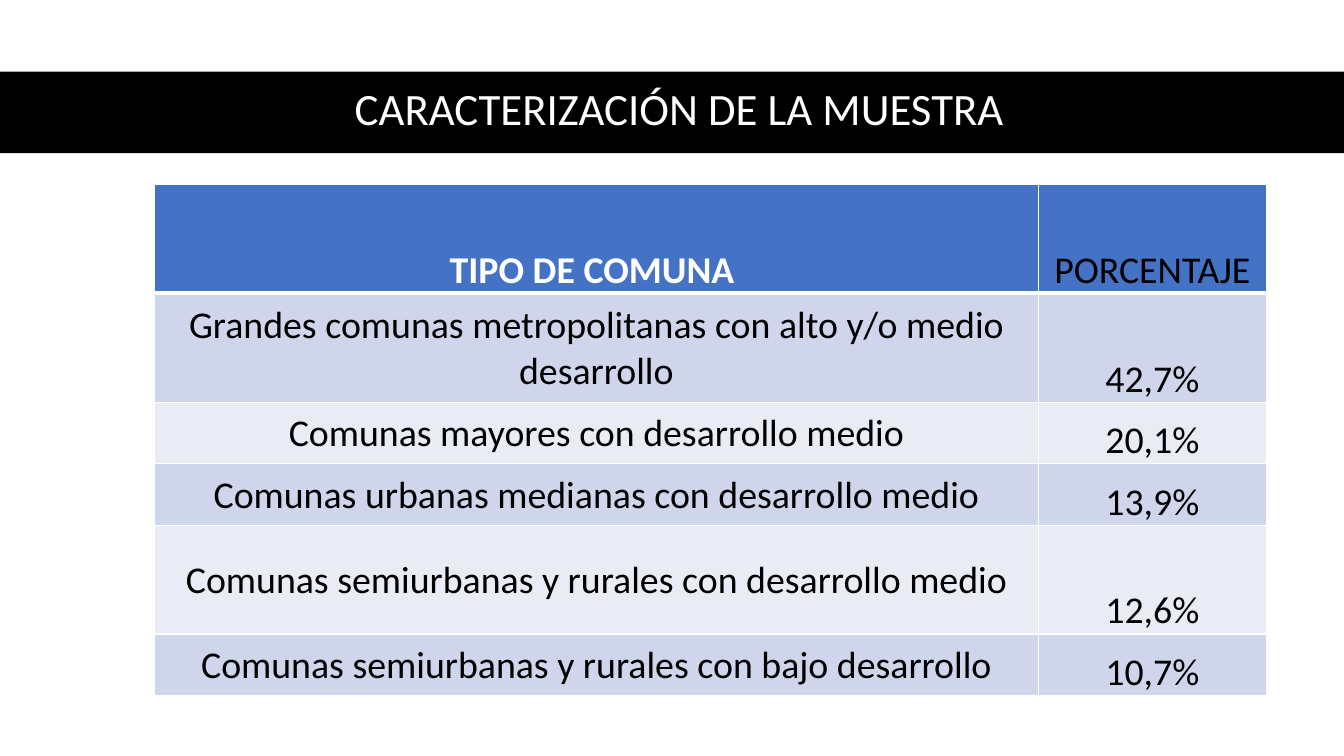
from pptx import Presentation
from pptx.dml.color import RGBColor
from pptx.enum.shapes import MSO_SHAPE as SHAPE
from pptx.enum.text import MSO_ANCHOR as ANCHOR, PP_ALIGN as ALIGN
from pptx.oxml import parse_xml
from pptx.oxml.ns import nsdecls
from pptx.util import Inches, Pt

BLACK = RGBColor(0x00, 0x00, 0x00)
WHITE = RGBColor(0xFF, 0xFF, 0xFF)
BLUE = RGBColor(0x44, 0x72, 0xC4)
BAND_DARK = RGBColor(0xCF, 0xD5, 0xEA)
BAND_LIGHT = RGBColor(0xE9, 0xEB, 0xF5)

COL_WIDTHS = [8.77, 2.26]
TALL, SHORT = 1.08, 0.61
ROWS = [
    (TALL, "TIPO DE COMUNA\u00a0", "PORCENTAJE"),
    (TALL, "Grandes comunas metropolitanas con alto y/o medio desarrollo", "42,7%"),
    (SHORT, "Comunas mayores con desarrollo medio", "20,1%"),
    (SHORT, "Comunas urbanas medianas con desarrollo medio", "13,9%"),
    (TALL, "Comunas semiurbanas y rurales con desarrollo medio", "12,6%"),
    (SHORT, "Comunas semiurbanas y rurales con bajo desarrollo", "10,7%"),
]


class SlideBuilder:
    font = "Calibri"

    def __init__(self, prs):
        self.s = prs.slides.add_slide(prs.slide_layouts[5])

    def style(self, p, size, color, bold=False):
        p.alignment = ALIGN.CENTER
        for r in p.runs:
            r.font.name = self.font
            r.font.size = Pt(size)
            r.font.bold = bold
            r.font.color.rgb = color

    def band(self, x, y, w, h, color):
        sp = self.s.shapes.add_shape(SHAPE.RECTANGLE, Inches(x), Inches(y), Inches(w), Inches(h))
        sp.shadow.inherit = False
        sp.fill.solid()
        sp.fill.fore_color.rgb = color
        sp.line.fill.background()

    def title(self, text, x, y, w, h):
        sp = self.s.shapes.title
        sp.left, sp.top, sp.width, sp.height = Inches(x), Inches(y), Inches(w), Inches(h)
        sp.element.getparent().append(sp.element)
        tf = sp.text_frame
        tf.text = text
        tf.word_wrap = True
        tf.vertical_anchor = ANCHOR.MIDDLE
        p = tf.paragraphs[0]
        p.line_spacing = 0.9
        p.space_after = Pt(6)
        self.style(p, 32, WHITE)

    def borders(self, cell, top, bottom):
        props = cell._tc.get_or_add_tcPr()
        widths = {"lnL": 1, "lnR": 1, "lnT": top, "lnB": bottom}
        for i, (side, width) in enumerate(widths.items()):
            props.insert(i, parse_xml(
                f'<a:{side} {nsdecls("a")} w="{Pt(width)}"><a:solidFill>'
                f'<a:srgbClr val="{WHITE}"/></a:solidFill></a:{side}>'))

    def cell(self, cell, text, fill, color, bold, anchor):
        cell.text = text
        cell.fill.solid()
        cell.fill.fore_color.rgb = fill
        cell.vertical_anchor = anchor
        cell.margin_left = cell.margin_right = cell.margin_top = Inches(0.02)
        cell.margin_bottom = 0
        self.style(cell.text_frame.paragraphs[0], 27, color, bold)

    def table(self, x, y, widths, rows):
        height = sum(row[0] for row in rows)
        table = self.s.shapes.add_table(len(rows), len(widths), Inches(x), Inches(y),
                                        Inches(sum(widths)), Inches(height)).table
        for col, width in zip(table.columns, widths):
            col.width = Inches(width)
        for i, (row_height, *texts) in enumerate(rows):
            table.rows[i].height = Inches(row_height)
            header = i == 0
            fill = BLUE if header else BAND_DARK if i % 2 else BAND_LIGHT
            for j, text in enumerate(texts):
                label = j == 0
                strong = header and label
                anchor = ANCHOR.MIDDLE if label and not header else ANCHOR.BOTTOM
                cell = table.cell(i, j)
                self.cell(cell, text, fill, WHITE if strong else BLACK, strong, anchor)
                self.borders(cell, 3 if i == 1 else 1, 3 if header else 1)


def main():
    prs = Presentation()
    prs.slide_width, prs.slide_height = Inches(13.33), Inches(7.5)
    slide = SlideBuilder(prs)
    slide.band(0, 0.71, 13.33, 0.81, BLACK)
    slide.title("CARACTERIZACIÓN DE LA MUESTRA", 0.61, 0.7, 12.26, 0.81)
    slide.table(1.53, 1.83, COL_WIDTHS, ROWS)
    prs.save("out.pptx")


if __name__ == "__main__":
    main()
